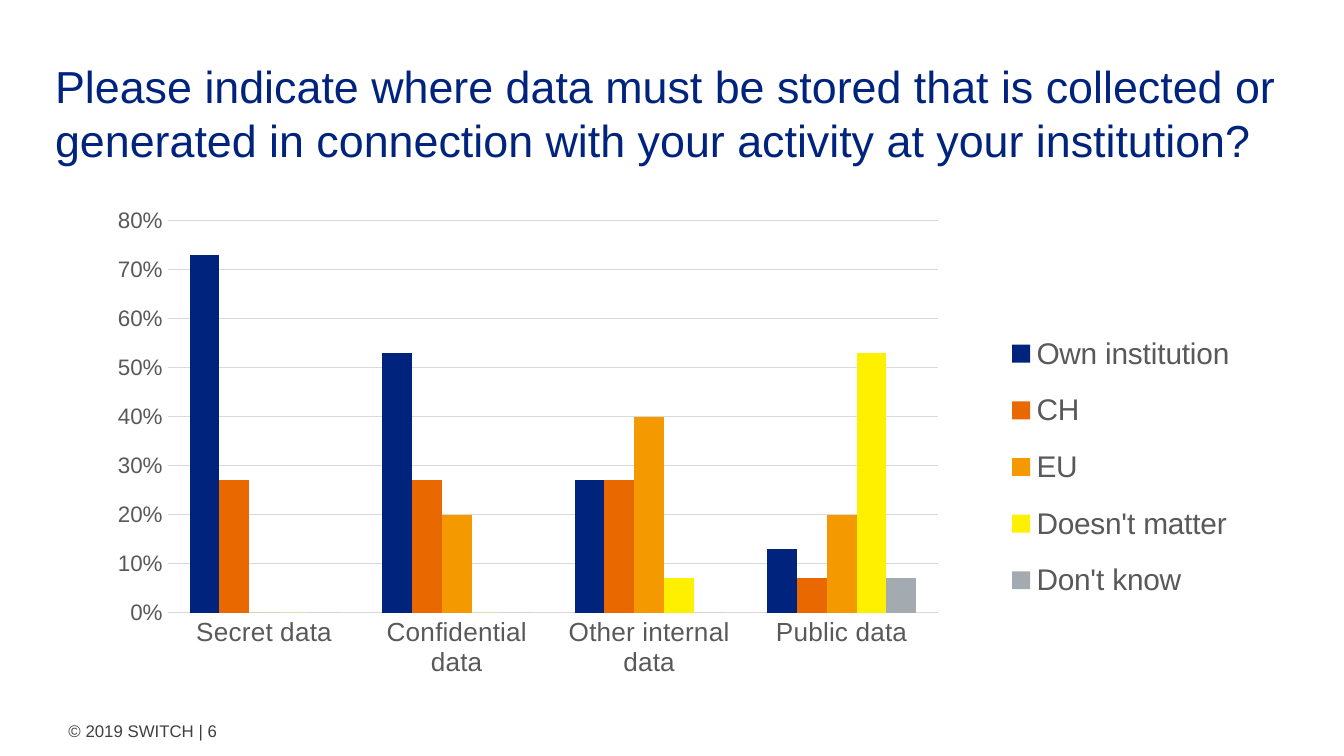
import pptx
import pptx.chart.data
import pptx.dml.color
import pptx.enum.chart
import pptx.enum.text
import pptx.oxml
import pptx.oxml.ns
import pptx.util
from pptx.util import Inches

RGBColor = pptx.dml.color.RGBColor
NAVY = RGBColor(0x00, 0x24, 0x7D)
DARK_ORANGE = RGBColor(0xE9, 0x68, 0x00)
ORANGE = RGBColor(0xF5, 0x99, 0x00)
YELLOW = RGBColor(0xFF, 0xF0, 0x00)
SILVER = RGBColor(0xA3, 0xAB, 0xB1)
WHITE = RGBColor(0xFF, 0xFF, 0xFF)
BLACK = RGBColor(0x00, 0x00, 0x00)
FOOTER_GRAY = RGBColor(0x40, 0x40, 0x40)
LABEL_GRAY = RGBColor(0x59, 0x59, 0x59)
GRID_GRAY = RGBColor(0xD9, 0xD9, 0xD9)

FONT = "Arial"
SLIDE_WIDTH = Inches(10)
SLIDE_HEIGHT = SLIDE_WIDTH * 9 // 16
CHART_WIDTH = Inches(9.08)
CHART_HEIGHT = Inches(4.04)
TITLE = (
    "Please indicate where data must be stored that is collected or "
    "generated in connection with your activity at your institution?"
)
FOOTER = "© 2019\u00a0SWITCH | 6"
CATEGORIES = ["Secret data", "Confidential data", "Other internal data", "Public data"]
SERIES = [
    ("Own institution", [0.73, 0.53, 0.27, 0.13], NAVY),
    ("CH", [0.27, 0.27, 0.27, 0.07], DARK_ORANGE),
    ("EU", [0, 0.2, 0.4, 0.2], ORANGE),
    ("Doesn't matter", [0, 0, 0.07, 0.53], YELLOW),
    ("Don't know", [0, 0, 0, 0.07], SILVER),
]


def style_font(font, size, color):
    font.name = FONT
    font.size = pptx.util.Pt(size)
    font.bold = False
    font.color.rgb = color


def style_line(line, color):
    line.color.rgb = color
    line.width = pptx.util.Pt(0.75)


def add_run(paragraph, text, size, color):
    paragraph.alignment = pptx.enum.text.PP_ALIGN.LEFT
    run = paragraph.add_run()
    run.text = text
    style_font(run.font, size, color)


def add_title(slide):
    title = slide.shapes.title
    title.left, title.top = Inches(0.31), Inches(0.37)
    title.width, title.height = Inches(9.69), Inches(0.94)
    title.fill.solid()
    title.fill.fore_color.rgb = WHITE
    frame = title.text_frame
    frame.word_wrap = True
    frame.auto_size = pptx.enum.text.MSO_AUTO_SIZE.NONE
    frame.vertical_anchor = pptx.enum.text.MSO_ANCHOR.MIDDLE
    add_run(frame.paragraphs[0], TITLE, 24, NAVY)


def add_footer(slide):
    box = slide.shapes.add_textbox(Inches(0.51), Inches(5.32), Inches(1.26), Inches(0.23))
    frame = box.text_frame
    frame.word_wrap = False
    frame.margin_left = frame.margin_right = frame.margin_top = frame.margin_bottom = 0
    frame.vertical_anchor = pptx.enum.text.MSO_ANCHOR.MIDDLE
    add_run(frame.paragraphs[0], FOOTER, 9, FOOTER_GRAY)


def set_layout(parent, index, left, top, width, height, inner=False):
    for layout in parent.findall(pptx.oxml.ns.qn("c:layout")):
        parent.remove(layout)
    target = '<c:layoutTarget val="inner"/>' if inner else ""
    parent.insert(index, pptx.oxml.parse_xml(
        f'<c:layout {pptx.oxml.ns.nsdecls("c")}><c:manualLayout>{target}'
        '<c:xMode val="edge"/><c:yMode val="edge"/>'
        f'<c:x val="{left / CHART_WIDTH}"/><c:y val="{top / CHART_HEIGHT}"/>'
        f'<c:w val="{width / CHART_WIDTH}"/><c:h val="{height / CHART_HEIGHT}"/>'
        '</c:manualLayout></c:layout>'
    ))


def style_axes(chart):
    for axis, size in ((chart.category_axis, 14), (chart.value_axis, 12)):
        axis.major_tick_mark = axis.minor_tick_mark = pptx.enum.chart.XL_TICK_MARK.NONE
        style_font(axis.tick_labels.font, size, LABEL_GRAY)
    style_line(chart.category_axis.format.line, GRID_GRAY)
    value_axis = chart.value_axis
    value_axis.minimum_scale, value_axis.maximum_scale = 0, 0.8
    value_axis.major_unit = 0.1
    value_axis.format.line.fill.background()
    style_line(value_axis.major_gridlines.format.line, GRID_GRAY)
    value_axis.tick_labels.number_format = "0%"
    value_axis.tick_labels.number_format_is_linked = False


def style_legend(chart):
    chart.has_legend = True
    legend = chart.legend
    legend.position = pptx.enum.chart.XL_LEGEND_POSITION.RIGHT
    legend.include_in_layout = False
    style_font(legend.font, 16, LABEL_GRAY)
    set_layout(legend._element, 1, Inches(6.78), Inches(0.86), Inches(2), Inches(2.29))


def add_storage_chart(slide):
    data = pptx.chart.data.CategoryChartData(number_format="0%")
    data.categories = CATEGORIES
    for name, values, _ in SERIES:
        data.add_series(name, values)
    chart = slide.shapes.add_chart(
        pptx.enum.chart.XL_CHART_TYPE.COLUMN_CLUSTERED,
        Inches(0.56), Inches(1.47), CHART_WIDTH, CHART_HEIGHT, data,
    ).chart
    chart.has_title = False
    style_font(chart.font, 10, BLACK)
    plot = chart.plots[0]
    plot.vary_by_categories = False
    plot.gap_width = 145
    plot.overlap = 0
    for series, (_, _, color) in zip(plot.series, SERIES):
        series.format.fill.solid()
        series.format.fill.fore_color.rgb = color
    style_axes(chart)
    style_legend(chart)
    plot_area = chart._chartSpace.chart.plotArea
    set_layout(plot_area, 0, Inches(0.69), Inches(0.17), Inches(5.73), Inches(2.92), inner=True)


def main():
    presentation = pptx.Presentation()
    presentation.slide_width = SLIDE_WIDTH
    presentation.slide_height = SLIDE_HEIGHT
    slide = presentation.slides.add_slide(presentation.slide_layouts[5])
    add_footer(slide)
    add_title(slide)
    add_storage_chart(slide)
    presentation.save("out.pptx")


if __name__ == "__main__":
    main()
